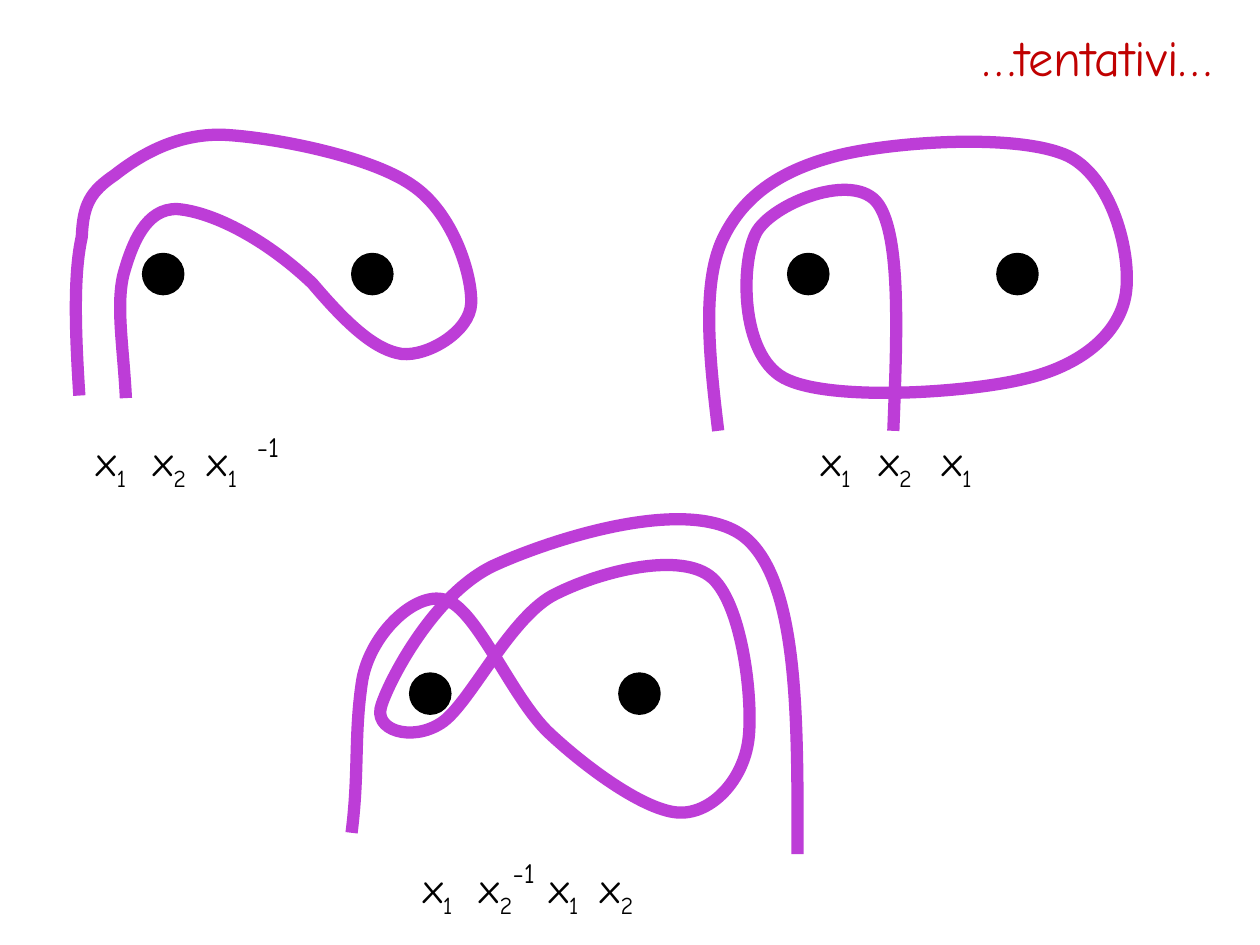
from lxml import etree
from pptx import Presentation
from pptx.dml.color import RGBColor
from pptx.enum.shapes import MSO_SHAPE
from pptx.enum.text import MSO_ANCHOR, MSO_AUTO_SIZE, PP_ALIGN
from pptx.oxml.ns import qn
from pptx.util import Pt

PX = 9144  # EMU per px, 100 px to the inch
ELLIPSE = MSO_SHAPE.OVAL
LEFT, RIGHT = PP_ALIGN.LEFT, PP_ALIGN.RIGHT
TOP, MIDDLE = MSO_ANCHOR.TOP, MSO_ANCHOR.MIDDLE
FIT_SHAPE = MSO_AUTO_SIZE.SHAPE_TO_FIT_TEXT
FONT = "Comic Neue"
BLACK, RED, PURPLE = "000000", "C00000", "BD3DD7"
DOT_SIZE, DOT_GAP = 31, 166

# Each loop: x and y of the left dot, then a start point and Bézier triples
LOOPS = [
    (114, 202, [
        (63, 314),
        (60, 266), (58, 219), (65, 188),
        (66, 162), (72, 152), (91, 139),
        (109, 125), (138, 106), (177, 107),
        (217, 109), (294, 124), (327, 147),
        (360, 169), (375, 219), (374, 241),
        (373, 263), (340, 283), (319, 281),
        (298, 278), (276, 258), (248, 225),
        (208, 187), (166, 168), (141, 166),
        (116, 165), (105, 193), (98, 218),
        (92, 243), (98, 276), (100, 316)]),
    (626, 202, [
        (570, 342),
        (563, 284), (557, 227), (573, 191),
        (590, 154), (622, 134), (667, 123),
        (713, 112), (810, 106), (848, 124),
        (885, 143), (899, 207), (893, 236),
        (887, 266), (857, 291), (812, 301),
        (766, 312), (657, 319), (622, 300),
        (587, 281), (588, 208), (600, 185),
        (612, 162), (678, 135), (697, 162),
        (715, 188), (712, 265), (709, 342)]),
    (326, 535, [
        (279, 661),
        (285, 614), (281, 585), (287, 543),
        (292, 505), (329, 469), (353, 476),
        (378, 482), (406, 554), (436, 582),
        (467, 611), (513, 644), (539, 645),
        (565, 646), (590, 619), (594, 587),
        (598, 556), (589, 476), (563, 457),
        (537, 438), (474, 454), (438, 473),
        (403, 493), (372, 560), (350, 574),
        (327, 589), (295, 580), (303, 559),
        (310, 538), (346, 469), (394, 448),
        (443, 426), (554, 391), (594, 429),
        (634, 467), (633, 573), (633, 678)]),
]

# Left, top, indices of the x terms, tab stops of the terms after the first
FORMULAS = [
    (67, 340, "121", (45, 88)),
    (642, 340, "121", (46, 96)),
    (326, 679, "1212", (45, 100, 141)),
]
EXPONENTS = [(194, 336), (397, 674)]


def px(n):
    return round(n * PX)


def color(value):
    return RGBColor.from_string(value)


def set_line(shape, value, width):
    shape.line.color.rgb = color(value)
    shape.line.width = Pt(width)
    shape.shadow.inherit = False


def add_dot(s, x, y):
    dot = s.shapes.add_shape(ELLIPSE, px(x), px(y), px(DOT_SIZE), px(DOT_SIZE))
    dot.fill.solid()
    dot.fill.fore_color.rgb = color(BLACK)
    set_line(dot, BLACK, 2)


def add_curve(s, points):
    """Draw an open curve; every three points after the first are a Bézier segment."""
    start, *rest = points
    builder = s.shapes.build_freeform(*start, scale=PX)
    builder.add_line_segments(rest, close=False)
    curve = builder.convert_to_shape()
    curve.fill.background()
    set_line(curve, PURPLE, 7)
    path = next(curve.element.iter(qn("a:path")))
    lines = path.findall(qn("a:lnTo"))
    for i in range(0, len(lines), 3):
        bezier = etree.SubElement(path, qn("a:cubicBezTo"))
        for line in lines[i:i + 3]:
            bezier.append(line[0])
            path.remove(line)


def add_text(s, box, runs, size, value=BLACK, align=LEFT, anchor=TOP, tabs=()):
    """Add one paragraph of (text, baseline percent) runs, with tab stops in px."""
    tb = s.shapes.add_textbox(*map(px, box))
    tf = tb.text_frame
    tf.word_wrap = True
    tf.vertical_anchor = anchor
    if anchor == TOP:
        tf.auto_size = FIT_SHAPE
    p = tf.paragraphs[0]
    p.alignment = align
    if tabs:
        tab_list = etree.SubElement(p._p.get_or_add_pPr(), qn("a:tabLst"))
        for stop in tabs:
            etree.SubElement(tab_list, qn("a:tab"), pos=str(px(stop)), algn="l")
    for text, baseline in runs:
        r = p.add_run()
        r.text = text
        r.font.name = FONT
        r.font.size = Pt(size)
        r.font.color.rgb = color(value)
        if baseline:
            r.font._element.set("baseline", str(baseline * 1000))


def add_formula(s, x, y, indices, tabs):
    runs = []
    for i, index in enumerate(indices):
        runs += [("\tx" if i else "x", 0), (index, -25)]
    add_text(s, (x, y, 268, 50), runs, 24, tabs=tabs)


def main():
    prs = Presentation()
    prs.slide_width, prs.slide_height = px(1000), px(750)
    s = prs.slides.add_slide(prs.slide_layouts[6])
    add_text(s, (35, 13, 937, 63), [("…tentativi…", 0)], 28.8,
             value=RED, align=RIGHT, anchor=MIDDLE)
    for x, y, points in LOOPS:
        add_dot(s, x, y)
        add_dot(s, x + DOT_GAP, y)
        add_curve(s, points)
    for formula in FORMULAS:
        add_formula(s, *formula)
    for x, y in EXPONENTS:
        add_text(s, (x, y, 55, 37), [("-1", 0)], 16)
    prs.save("out.pptx")


if __name__ == "__main__":
    main()
